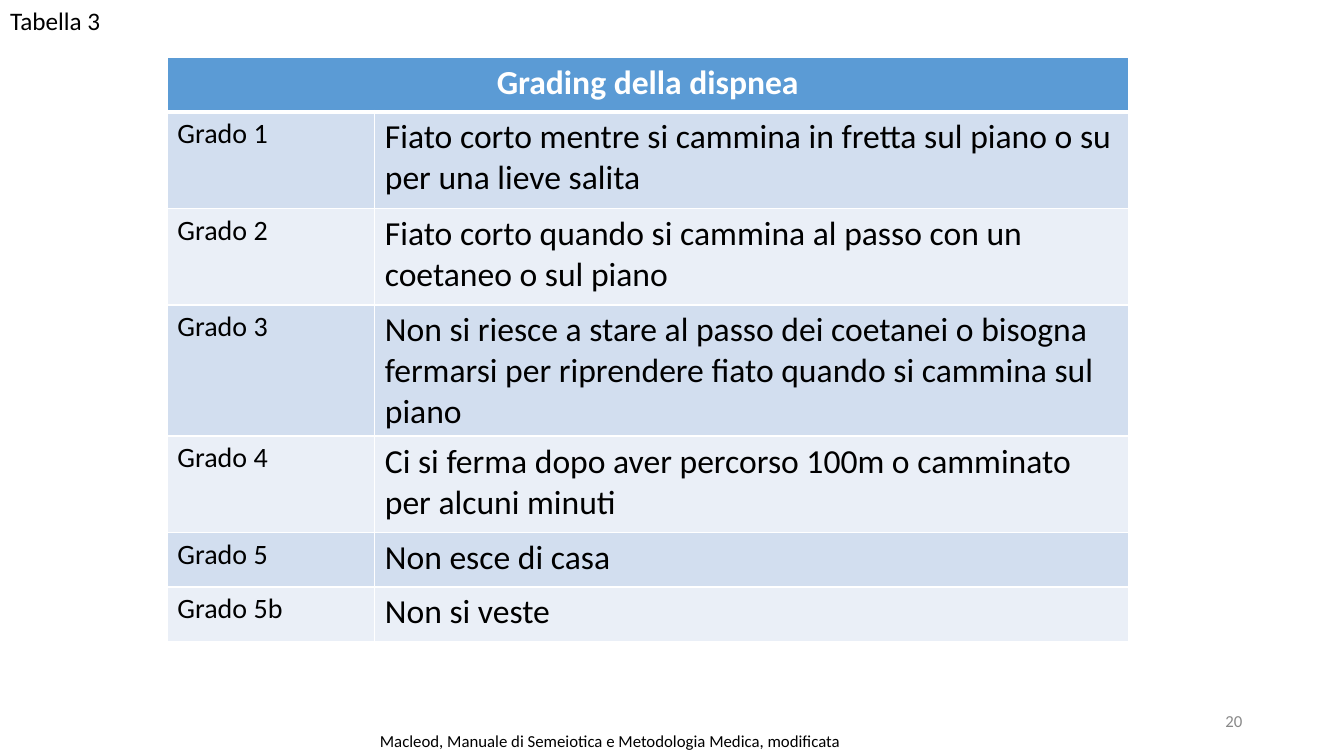
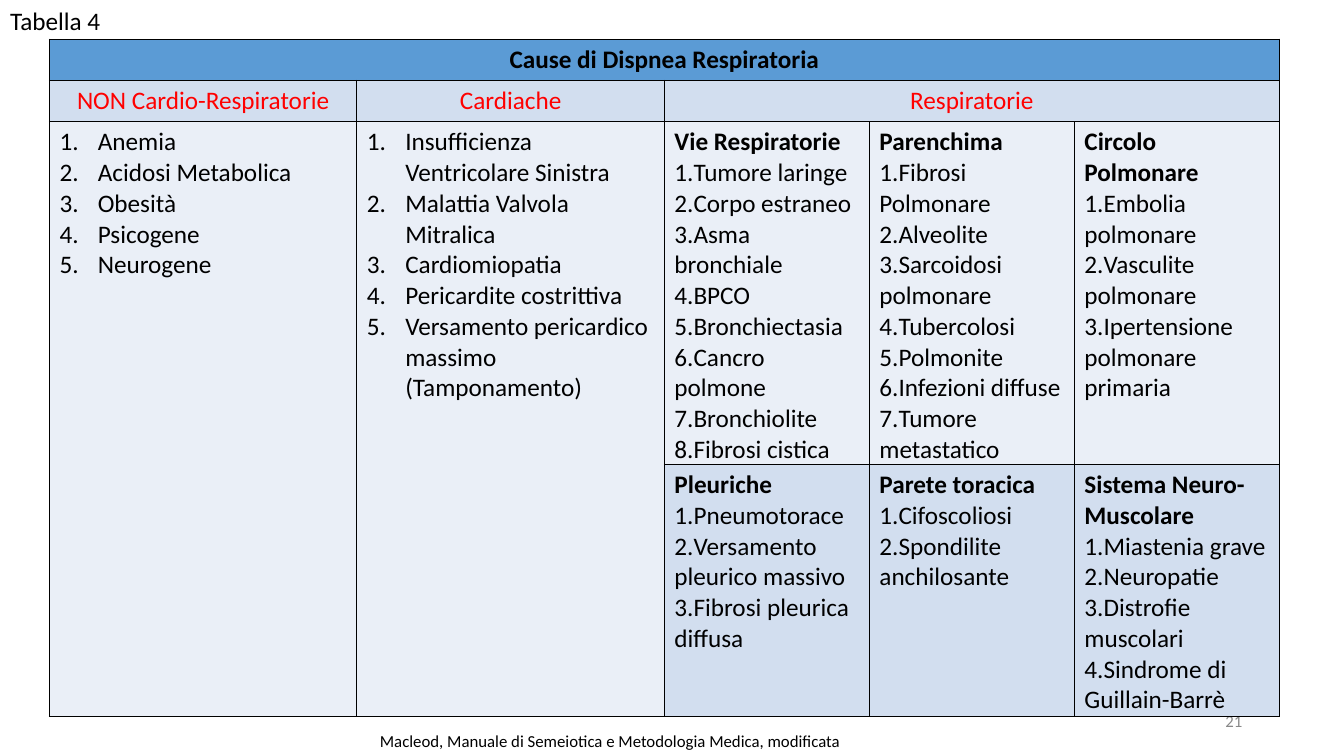
from dataclasses import dataclass

from lxml.etree import SubElement
from pptx import Presentation
from pptx.dml.color import RGBColor
from pptx.enum.text import MSO_ANCHOR, MSO_AUTO_SIZE, PP_ALIGN
from pptx.oxml.ns import qn
from pptx.util import Inches, Pt

COLORS = {
    "text": "000000",
    "white": "FFFFFF",
    "red": "FF0000",
    "gray": "898989",
    "header": "5B9BD5",
    "dark_band": "D2DEEF",
    "light_band": "EAEFF7",
}
FONT = "Calibri"
SOURCE = "Macleod, Manuale di Semeiotica e Metodologia Medica, modificata"
HANGING_INDENT = Inches(0.38)


@dataclass(frozen=True)
class Box:
    left: float
    top: float
    width: float
    height: float

    def lengths(self) -> tuple:
        return tuple(Inches(n) for n in (self.left, self.top, self.width, self.height))


@dataclass(frozen=True)
class TextStyle:
    size: int = 18
    color: str = "text"
    bold: bool = False
    align: PP_ALIGN = PP_ALIGN.LEFT


@dataclass(frozen=True)
class Cell:
    """A table cell: an optional heading above an optional numbered list."""
    fill: str
    heading: str = ""
    style: TextStyle = TextStyle()
    items: tuple = ()
    hanging: bool = False
    rows: int = 1
    columns: int = 1


@dataclass(frozen=True)
class Grid:
    """Column and row weights share out the box; None marks a merged cell."""
    box: Box
    columns: tuple
    rows: tuple
    cells: list
    border: str
    header_rule: float = 1


TITLE_BOX = Box(0, 0, 1.13, 0.4)
SOURCE_BOX = Box(3.67, 7.2, 4.83, 0.3)
NUMBER_BOX = Box(9.42, 6.95, 3, 0.4)

LABEL = TextStyle(20)
DESCRIPTION = TextStyle(24)
GROUP = TextStyle(color="red", align=PP_ALIGN.CENTER)
SUBGROUP = TextStyle(bold=True)

GRADES = [
    ("Grado 1", "Fiato corto mentre si cammina in fretta sul piano o su per una lieve salita"),
    ("Grado 2", "Fiato corto quando si cammina al passo con un coetaneo o sul piano"),
    ("Grado 3", "Non si riesce a stare al passo dei coetanei o bisogna fermarsi per "
                "riprendere fiato quando si cammina sul piano"),
    ("Grado 4", "Ci si ferma dopo aver percorso 100m o camminato per alcuni minuti"),
    ("Grado 5", "Non esce di casa"),
    ("Grado 5b", "Non si veste"),
]


def grading_grid() -> Grid:
    header = Cell("header", "Grading della dispnea",
                  TextStyle(24, "white", True, PP_ALIGN.CENTER), columns=2)
    cells = [[header, None]]
    for index, (label, description) in enumerate(GRADES):
        band = ("dark_band", "light_band")[index % 2]
        cells.append([Cell(band, label, LABEL), Cell(band, description, DESCRIPTION)])
    return Grid(Box(1.66, 0.57, 9.53, 5.79), (2.06, 7.48),
                (0.54, 0.96, 0.96, 1.3, 0.96, 0.54, 0.54), cells, "white", 3)


def causes_grid() -> Grid:
    def group(name: str, columns: int = 1) -> Cell:
        return Cell("dark_band", name, GROUP, columns=columns)

    def tall_list(*items: str) -> Cell:
        return Cell("light_band", items=items, hanging=True, rows=2)

    def upper(name: str, *items: str) -> Cell:
        return Cell("light_band", name, SUBGROUP, items)

    def lower(name: str, *items: str) -> Cell:
        return Cell("dark_band", name, SUBGROUP, items)

    header = Cell("header", "Cause di Dispnea Respiratoria",
                  TextStyle(bold=True, align=PP_ALIGN.CENTER), columns=5)
    cells = [
        [header, None, None, None, None],
        [group("NON Cardio-Respiratorie"), group("Cardiache"),
         group("Respiratorie", 3), None, None],
        [tall_list("Anemia", "Acidosi Metabolica", "Obesità", "Psicogene", "Neurogene"),
         tall_list("Insufficienza Ventricolare Sinistra", "Malattia Valvola Mitralica",
                   "Cardiomiopatia", "Pericardite costrittiva",
                   "Versamento pericardico massimo (Tamponamento)"),
         upper("Vie Respiratorie", "Tumore laringe", "Corpo estraneo", "Asma bronchiale",
               "BPCO", "Bronchiectasia", "Cancro polmone", "Bronchiolite", "Fibrosi cistica"),
         upper("Parenchima", "Fibrosi Polmonare", "Alveolite", "Sarcoidosi polmonare",
               "Tubercolosi", "Polmonite", "Infezioni diffuse", "Tumore metastatico"),
         upper("Circolo Polmonare", "Embolia polmonare", "Vasculite polmonare",
               "Ipertensione polmonare primaria")],
        [None, None,
         lower("Pleuriche", "Pneumotorace", "Versamento pleurico massivo",
               "Fibrosi pleurica diffusa"),
         lower("Parete toracica", "Cifoscoliosi", "Spondilite anchilosante"),
         lower("Sistema Neuro-Muscolare", "Miastenia grave", "Neuropatie",
               "Distrofie muscolari", "Sindrome di Guillain-Barrè")],
    ]
    return Grid(Box(0.49, 0.39, 12.2, 6.71), (3, 3, 2, 2, 2),
                (0.41, 0.41, 3.4, 2.5), cells, "text")


def write_paragraph(para, text: str, style: TextStyle) -> None:
    para.text = text
    para.alignment = style.align
    for span in para.runs:
        span.font.name = FONT
        span.font.size = Pt(style.size)
        span.font.bold = style.bold
        span.font.color.rgb = RGBColor.from_string(COLORS[style.color])


def number_paragraph(para, indent: int) -> None:
    properties = para._p.get_or_add_pPr()
    properties.set("marL", str(indent))
    properties.set("indent", str(-indent))
    SubElement(properties, qn("a:buAutoNum"), type="arabicPeriod")


def write_box(shape, box: Box, text: str, style: TextStyle, wrap: bool = False,
              anchor: MSO_ANCHOR = MSO_ANCHOR.TOP) -> None:
    shape.left, shape.top, shape.width, shape.height = box.lengths()
    frame = shape.text_frame
    frame.word_wrap = wrap
    frame.auto_size = MSO_AUTO_SIZE.NONE if wrap else MSO_AUTO_SIZE.SHAPE_TO_FIT_TEXT
    frame.vertical_anchor = anchor
    write_paragraph(frame.paragraphs[0], text, style)


def draw_borders(cell, color: str, top: float, bottom: float) -> None:
    """Must run before the fill is set, as the schema puts lines first."""
    properties = cell._tc.get_or_add_tcPr()
    for side, width in (("L", 1), ("R", 1), ("T", top), ("B", bottom)):
        line = SubElement(properties, qn(f"a:ln{side}"), w=str(Pt(width)))
        fill = SubElement(line, qn("a:solidFill"))
        SubElement(fill, qn("a:srgbClr"), val=COLORS[color])


def write_cell(cell, content: Cell) -> None:
    frame = cell.text_frame
    lines = ([(content.heading, False)] if content.heading else [])
    lines += [(item, True) for item in content.items]
    for index, (text, numbered) in enumerate(lines):
        para = frame.add_paragraph() if index else frame.paragraphs[0]
        write_paragraph(para, text, TextStyle() if numbered else content.style)
        if numbered:
            number_paragraph(para, HANGING_INDENT if content.hanging else 0)


def draw_grid(slide, grid: Grid) -> None:
    table = slide.shapes.add_table(len(grid.rows), len(grid.columns),
                                   *grid.box.lengths()).table
    table.first_row = table.horz_banding = False
    for column, weight in zip(table.columns, grid.columns):
        column.width = Inches(grid.box.width * weight / sum(grid.columns))
    for row, weight in zip(table.rows, grid.rows):
        row.height = Inches(grid.box.height * weight / sum(grid.rows))

    for r, contents in enumerate(grid.cells):
        for c, content in enumerate(contents):
            if content is None:
                continue
            origin = table.cell(r, c)
            if content.rows * content.columns > 1:
                origin.merge(table.cell(r + content.rows - 1, c + content.columns - 1))
            for y in range(r, r + content.rows):
                for x in range(c, c + content.columns):
                    part = table.cell(y, x)
                    draw_borders(part, grid.border,
                                 top=grid.header_rule if y == 1 else 1,
                                 bottom=grid.header_rule if y == 0 else 1)
                    part.fill.solid()
                    part.fill.fore_color.rgb = RGBColor.from_string(COLORS[content.fill])
            write_cell(origin, content)


def add_page(deck, title: str, number: int, grid: Grid) -> None:
    page = deck.slides.add_slide(deck.slide_layouts[5])
    write_box(page.shapes.title, TITLE_BOX, title, TextStyle())
    number_box = page.shapes.add_textbox(*NUMBER_BOX.lengths())
    write_box(number_box, NUMBER_BOX, str(number),
              TextStyle(12, "gray", align=PP_ALIGN.RIGHT), True, MSO_ANCHOR.MIDDLE)
    source_box = page.shapes.add_textbox(*SOURCE_BOX.lengths())
    write_box(source_box, SOURCE_BOX, SOURCE, TextStyle(12))
    draw_grid(page, grid)


def main() -> None:
    deck = Presentation()
    deck.slide_width, deck.slide_height = Inches(13.33), Inches(7.5)
    add_page(deck, "Tabella 3", 20, grading_grid())
    add_page(deck, "Tabella 4", 21, causes_grid())
    deck.save("out.pptx")


if __name__ == "__main__":
    main()
